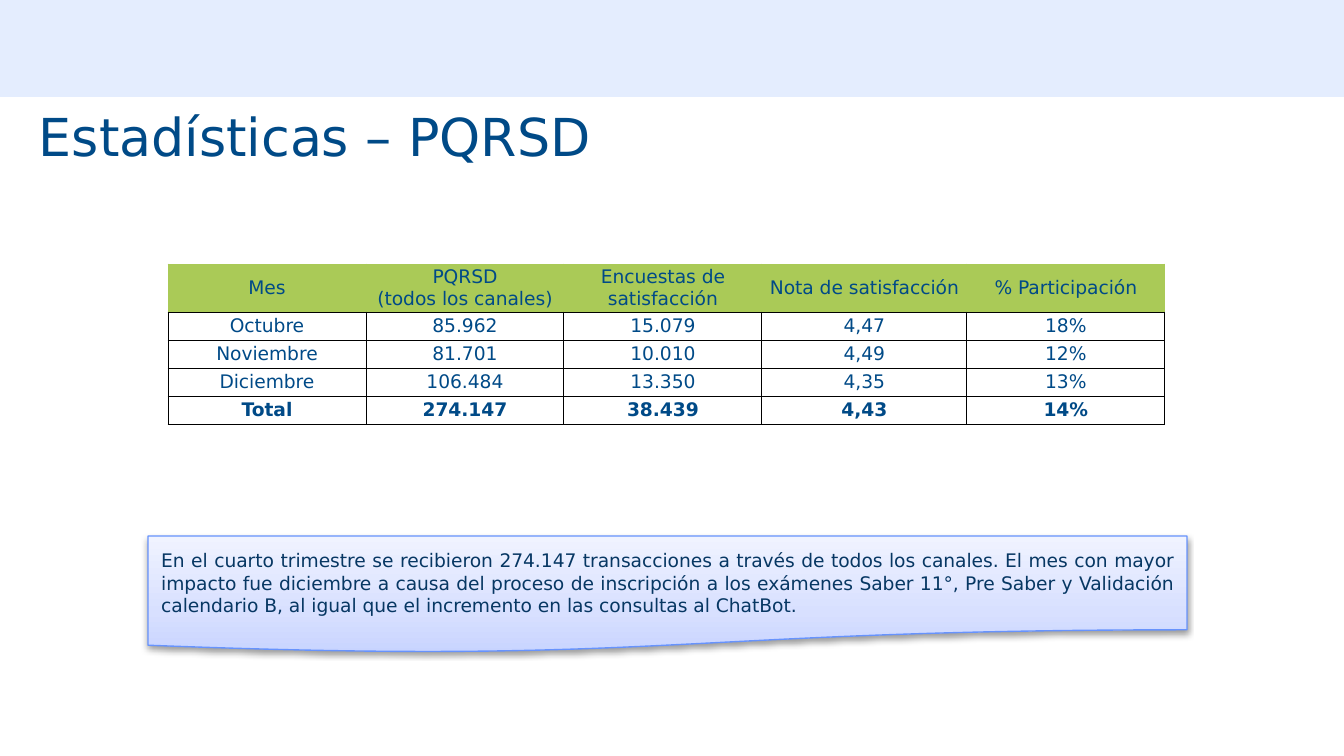
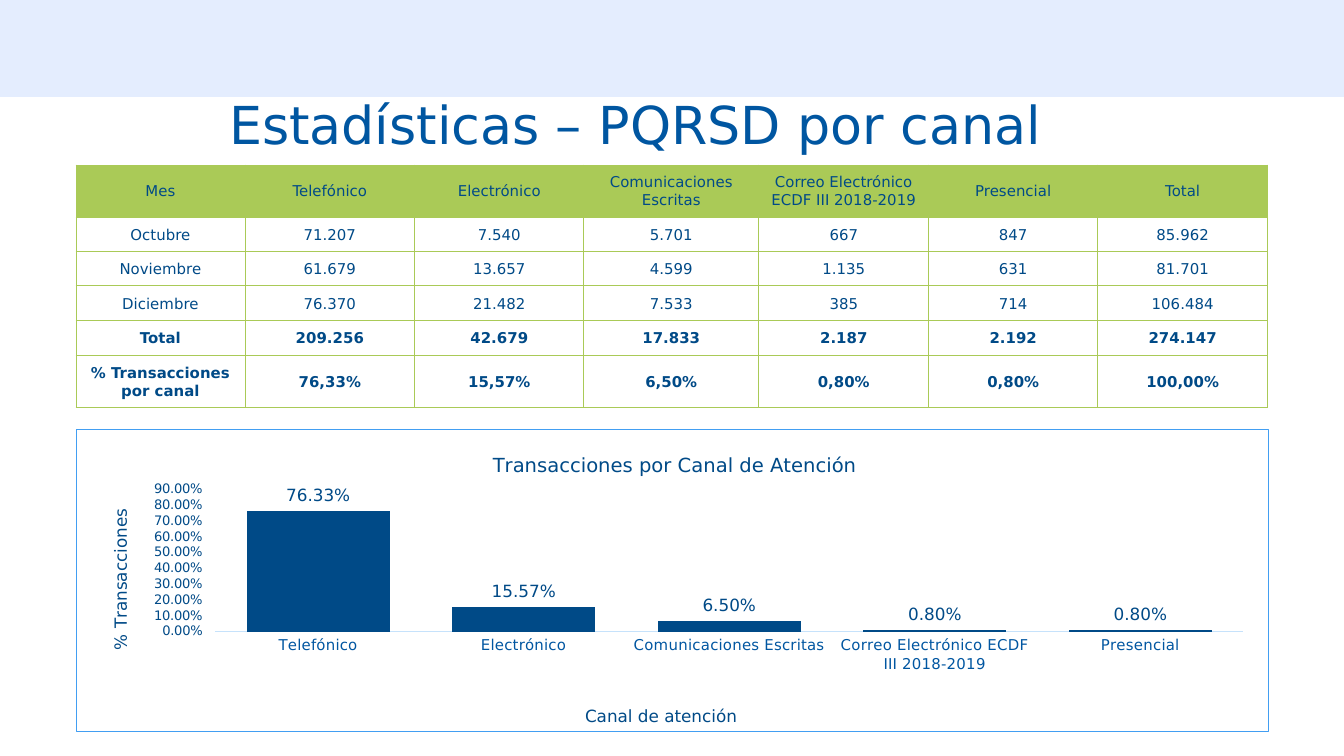
"""Build two slides of PQRSD statistics: totals per month and totals per channel."""
import copy
from dataclasses import dataclass
from typing import Any, Optional

import lxml.etree
import pptx
import pptx.chart.data
import pptx.dml.color
import pptx.enum.chart
import pptx.enum.shapes
import pptx.enum.text
import pptx.oxml
import pptx.oxml.ns
import pptx.util

RGBColor = pptx.dml.color.RGBColor
NAVY = RGBColor(0x00, 0x4A, 0x87)
BLUE = RGBColor(0x00, 0x56, 0xA1)
NOTE_TEXT = RGBColor(0x07, 0x37, 0x63)
BAND = RGBColor(0xE4, 0xED, 0xFE)
GREEN = RGBColor(0xAA, 0xCA, 0x57)
BLACK = RGBColor(0x00, 0x00, 0x00)
WHITE = RGBColor(0xFF, 0xFF, 0xFF)
NOTE_LINE = RGBColor(0x67, 0x93, 0xFD)
NOTE_DARK = RGBColor(0xC8, 0xD4, 0xFF)
NOTE_MID = RGBColor(0xD8, 0xE0, 0xFF)
NOTE_LIGHT = RGBColor(0xF0, 0xF3, 0xFF)
CHART_LINE = RGBColor(0x42, 0x9E, 0xF2)
AXIS_LINE = RGBColor(0xC6, 0xE2, 0xFB)

FONT = "DejaVu Sans"
ALIGN = pptx.enum.text.PP_ALIGN
MIDDLE = pptx.enum.text.MSO_ANCHOR.MIDDLE
SHAPES = pptx.enum.shapes.MSO_SHAPE
CHART = pptx.enum.chart
PX_PER_INCH = 134.4
A_NS = 'xmlns:a="http://schemas.openxmlformats.org/drawingml/2006/main"'
C_NS = 'xmlns:c="http://schemas.openxmlformats.org/drawingml/2006/chart"'


@dataclass(frozen=True)
class Box:
    left: int
    top: int
    width: int
    height: int

    def emu(self) -> tuple[int, ...]:
        return tuple(px(v) for v in (self.left, self.top, self.width, self.height))


@dataclass(frozen=True)
class Title:
    text: str
    top: int
    color: RGBColor
    align: Any


@dataclass(frozen=True)
class Grid:
    left: int
    top: int
    cols: tuple[int, ...]
    heights: tuple[int, ...]
    size: int
    border: RGBColor
    bold_from: int
    rows: tuple[tuple[str, ...], ...]


@dataclass(frozen=True)
class ChartTitle:
    text: str
    size: float
    left: int
    top: int


MONTH_TITLE = Title("Estadísticas – PQRSD", 103, NAVY, ALIGN.LEFT)
CHANNEL_TITLE = Title("Estadísticas – PQRSD por canal", 91, BLUE, ALIGN.CENTER)

MONTH_GRID = Grid(
    168, 264, (198, 198, 198, 205, 198), (48, 28, 28, 28, 28), 10, BLACK, 4,
    (
        ("Mes", "PQRSD\n(todos los canales)", "Encuestas de satisfacción",
         "Nota de satisfacción", "% Participación"),
        ("Octubre", "85.962", "15.079", "4,47", "18%"),
        ("Noviembre", "81.701", "10.010", "4,49", "12%"),
        ("Diciembre", "106.484", "13.350", "4,35", "13%"),
        ("Total", "274.147", "38.439", "4,43", "14%"),
    ),
)

CHANNELS = ("Telefónico", "Electrónico", "Comunicaciones Escritas",
            "Correo Electrónico ECDF III 2018-2019", "Presencial")
SHARES = (0.7633, 0.1557, 0.065, 0.008, 0.008)

CHANNEL_GRID = Grid(
    76, 165, (169, 170, 169, 175, 170, 169, 170), (52, 35, 34, 35, 35, 52), 8, GREEN, 4,
    (
        ("Mes", *CHANNELS, "Total"),
        ("Octubre", "71.207", "7.540", "5.701", "667", "847", "85.962"),
        ("Noviembre", "61.679", "13.657", "4.599", "1.135", "631", "81.701"),
        ("Diciembre", "76.370", "21.482", "7.533", "385", "714", "106.484"),
        ("Total", "209.256", "42.679", "17.833", "2.187", "2.192", "274.147"),
        ("% Transacciones por canal", "76,33%", "15,57%", "6,50%", "0,80%", "0,80%", "100,00%"),
    ),
)

NOTE_BOX = Box(148, 536, 1039, 117)
NOTE = ("En el cuarto trimestre se recibieron 274.147 transacciones a través de todos los "
        "canales. El mes con mayor impacto fue diciembre a causa del proceso de inscripción "
        "a los exámenes Saber 11°, Pre Saber y Validación calendario B, al igual que el "
        "incremento en las consultas al ChatBot.")

CHART_BOX = Box(76, 429, 1193, 303)
PLOT_BOX = Box(139, 60, 1029, 143)
MAIN_TITLE = ChartTitle("Transacciones por Canal de Atención", 10.5, 413, 19)
CAT_TITLE = ChartTitle("Canal de atención", 9, 506, 274)
VAL_TITLE = ChartTitle("% Transacciones", 9, 30, 77)


def px(value: int) -> int:
    return round(value * 914400 / PX_PER_INCH)


def style_font(font: Any, size: float, color: RGBColor, bold: bool = False) -> None:
    font.name = FONT
    font.size = pptx.util.Pt(size)
    font.bold = bold
    font.color.rgb = color


def draw_heading(s: Any, title: Title) -> None:
    sp = s.shapes.add_shape(SHAPES.RECTANGLE, *Box(0, 0, 1344, 97).emu())
    sp.shadow.inherit = False
    sp.fill.solid()
    sp.fill.fore_color.rgb = BAND
    sp.line.fill.background()
    tf = s.shapes.add_textbox(*Box(30, title.top, 1210, 73).emu()).text_frame
    tf.word_wrap = True
    tf.vertical_anchor = MIDDLE
    tf.margin_left = tf.margin_right = px(9)
    tf.margin_top = tf.margin_bottom = px(5)
    p = tf.paragraphs[0]
    p.text = title.text
    p.alignment = title.align
    p.line_spacing = 0.9
    style_font(p.font, 28, title.color)


def set_border(cell: Any, side: str, color: RGBColor) -> None:
    line = pptx.oxml.parse_xml(
        f'<a:ln{side} {A_NS} w="6350"><a:solidFill><a:srgbClr val="{color}"/>'
        f'</a:solidFill></a:ln{side}>')
    cell._tc.get_or_add_tcPr().append(line)


def draw_grid(s: Any, grid: Grid) -> None:
    box = Box(grid.left, grid.top, sum(grid.cols), sum(grid.heights))
    table = s.shapes.add_table(len(grid.rows), len(grid.cols), *box.emu()).table
    table.first_row = table.horz_banding = False
    for column, width in zip(table.columns, grid.cols):
        column.width = px(width)
    for i, (row, height, texts) in enumerate(zip(table.rows, grid.heights, grid.rows)):
        row.height = px(height)
        for cell, text in zip(row.cells, texts):
            cell.margin_left = cell.margin_right = cell.margin_top = px(1)
            cell.margin_bottom = 0
            cell.vertical_anchor = MIDDLE
            for side in "LRTB":
                header_edge = i == 0 and side != "B"
                set_border(cell, side, GREEN if header_edge else grid.border)
            if i == 0:
                cell.fill.solid()
                cell.fill.fore_color.rgb = GREEN
            else:
                cell.fill.background()
            p = cell.text_frame.paragraphs[0]
            p.text = text
            p.alignment = ALIGN.CENTER
            style_font(p.font, grid.size, NAVY, i >= grid.bold_from)


def draw_note(s: Any) -> None:
    sp = s.shapes.add_shape(SHAPES.FLOWCHART_DOCUMENT, *NOTE_BOX.emu())
    sp.fill.gradient()
    sp.fill.gradient_angle = 90
    first, last = sp.fill.gradient_stops
    first.color.rgb, first.position = NOTE_DARK, 0
    last.color.rgb, last.position = NOTE_LIGHT, 1
    stops = sp._element.spPr.find(".//" + pptx.oxml.ns.qn("a:gsLst"))
    stops.insert(1, copy.deepcopy(stops[0]))
    middle = sp.fill.gradient_stops[1]
    middle.color.rgb, middle.position = NOTE_MID, 0.35
    sp.line.color.rgb = NOTE_LINE
    sp.line.width = pptx.util.Pt(0.75)
    sp.shadow.inherit = False
    sp._element.spPr.find(pptx.oxml.ns.qn("a:effectLst")).append(pptx.oxml.parse_xml(
        f'<a:outerShdw {A_NS} blurRad="40000" dist="20000" dir="5400000" rotWithShape="0">'
        '<a:srgbClr val="000000"><a:alpha val="38000"/></a:srgbClr></a:outerShdw>'))
    tf = sp.text_frame
    tf.word_wrap = True
    tf.vertical_anchor = MIDDLE
    p = tf.paragraphs[0]
    p.text = NOTE
    p.alignment = ALIGN.JUSTIFY
    style_font(p.font, 10, NOTE_TEXT)


def place(parent: Any, index: int, left: int, top: int,
          size: Optional[tuple[int, int]] = None) -> None:
    for old in parent.findall(pptx.oxml.ns.qn("c:layout")):
        parent.remove(old)
    parts = [("x", left / CHART_BOX.width), ("y", top / CHART_BOX.height)]
    if size:
        parts += [("w", size[0] / CHART_BOX.width), ("h", size[1] / CHART_BOX.height)]
    target = '<c:layoutTarget val="inner"/>' if size else ""
    modes = '<c:xMode val="edge"/><c:yMode val="edge"/>'
    values = "".join(f'<c:{name} val="{value:.4f}"/>' for name, value in parts)
    parent.insert(index, pptx.oxml.parse_xml(
        f"<c:layout {C_NS}><c:manualLayout>{target}{modes}{values}</c:manualLayout></c:layout>"))


def set_chart_title(owner: Any, element: Any, title: ChartTitle) -> None:
    p = element.text_frame.paragraphs[0]
    p.text = title.text
    style_font(p.font, title.size, NAVY)
    place(element._element, 1, title.left, title.top)


def draw_chart(s: Any) -> None:
    data = pptx.chart.data.CategoryChartData(number_format="0.00%")
    data.categories = CHANNELS
    data.add_series("Series 1", SHARES)
    chart = s.shapes.add_chart(
        CHART.XL_CHART_TYPE.COLUMN_CLUSTERED, *CHART_BOX.emu(), data).chart
    style_font(chart.font, 9, NAVY)
    chart.has_legend = False
    cat, val = chart.category_axis, chart.value_axis
    set_chart_title(chart, chart.chart_title, MAIN_TITLE)
    set_chart_title(cat, cat.axis_title, CAT_TITLE)
    set_chart_title(val, val.axis_title, VAL_TITLE)
    cat.major_tick_mark = CHART.XL_TICK_MARK.NONE
    cat.format.line.color.rgb = AXIS_LINE
    cat.format.line.width = pptx.util.Pt(0.75)
    style_font(cat.tick_labels.font, 8, BLUE)
    val.has_major_gridlines = False
    val.major_tick_mark = CHART.XL_TICK_MARK.OUTSIDE
    val.minimum_scale, val.maximum_scale, val.major_unit = 0, 0.9, 0.1
    val.format.line.fill.background()
    val.tick_labels.number_format = "0.00%"
    val.tick_labels.number_format_is_linked = False
    style_font(val.tick_labels.font, 7, NAVY)
    plot = chart.plots[0]
    plot.gap_width = 44
    plot.vary_by_categories = False
    fill = plot.series[0].format.fill
    fill.solid()
    fill.fore_color.rgb = NAVY
    labels = plot.series[0].data_labels
    labels.show_value = True
    labels.position = CHART.XL_LABEL_POSITION.OUTSIDE_END
    labels.number_format = "0.00%"
    labels.number_format_is_linked = False
    style_font(labels.font, 9, NAVY)
    root = chart._chartSpace
    place(root.find(".//" + pptx.oxml.ns.qn("c:plotArea")), 0, PLOT_BOX.left, PLOT_BOX.top,
          (PLOT_BOX.width, PLOT_BOX.height))
    root.find(pptx.oxml.ns.qn("c:txPr")).addprevious(pptx.oxml.parse_xml(
        f'<c:spPr {C_NS} {A_NS}><a:solidFill><a:srgbClr val="{WHITE}"/></a:solidFill>'
        f'<a:ln w="9525"><a:solidFill><a:srgbClr val="{CHART_LINE}"/></a:solidFill></a:ln>'
        '</c:spPr>'))


def main() -> None:
    prs = pptx.Presentation()
    prs.slide_width, prs.slide_height = px(1344), px(756)
    months, channels = (prs.slides.add_slide(prs.slide_layouts[6]) for _ in range(2))
    draw_heading(months, MONTH_TITLE)
    draw_note(months)
    draw_grid(months, MONTH_GRID)
    draw_heading(channels, CHANNEL_TITLE)
    draw_grid(channels, CHANNEL_GRID)
    draw_chart(channels)
    prs.save("out.pptx")


if __name__ == "__main__":
    main()
